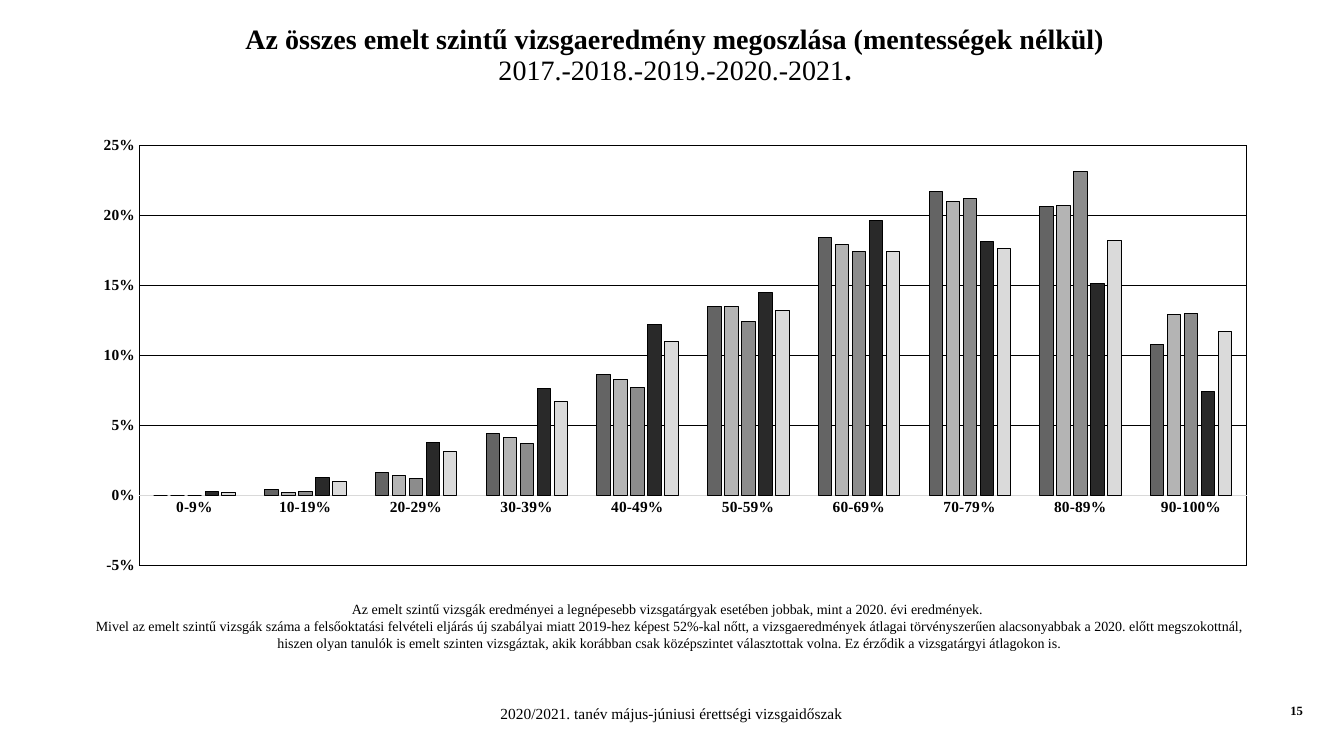
from lxml import etree
from pptx import Presentation
from pptx.chart.data import CategoryChartData
from pptx.dml.color import RGBColor
from pptx.enum.chart import XL_CHART_TYPE as ChartType, XL_TICK_MARK as TickMark
from pptx.enum.text import MSO_ANCHOR as Anchor, PP_ALIGN as Align
from pptx.oxml import parse_xml
from pptx.oxml.ns import nsdecls, qn
from pptx.util import Inches, Pt

BLACK = RGBColor(0x00, 0x00, 0x00)
AXIS_GRAY = RGBColor(0xD9, 0xD9, 0xD9)
YEAR_COLORS = [
    RGBColor(0x64, 0x64, 0x64),
    RGBColor(0xB4, 0xB4, 0xB4),
    RGBColor(0x8C, 0x8C, 0x8C),
    RGBColor(0x29, 0x29, 0x29),
    RGBColor(0xDA, 0xDA, 0xDA),
]
SCORE_BANDS = [f"{low}-{low + 9}%" for low in range(0, 90, 10)] + ["90-100%"]
YEAR_SHARES = [
    [0, 0.004, 0.016, 0.044, 0.086, 0.135, 0.184, 0.217, 0.206, 0.108],
    [0, 0.002, 0.014, 0.041, 0.083, 0.135, 0.179, 0.21, 0.207, 0.129],
    [0, 0.003, 0.012, 0.037, 0.077, 0.124, 0.174, 0.212, 0.231, 0.13],
    [0.003, 0.013, 0.038, 0.076, 0.122, 0.145, 0.196, 0.181, 0.151, 0.074],
    [0.002, 0.01, 0.031, 0.067, 0.11, 0.132, 0.174, 0.176, 0.182, 0.117],
]
PLOT_LAYOUT = {"x": 0.05, "y": 0.04, "w": 0.93, "h": 0.92}


class ExamSlide:
    font_name = "Times New Roman"

    def __init__(self, presentation):
        self.slide = presentation.slides.add_slide(presentation.slide_layouts[6])

    def style_font(self, font, size, bold=False):
        font.name = self.font_name
        font.size = Pt(size)
        font.bold = bold
        font.color.rgb = BLACK

    def style_line(self, line, color=BLACK, width=0.5):
        line.color.rgb = color
        line.width = Pt(width)

    def add_text(self, box, paragraphs, size, align=Align.CENTER,
                 anchor=Anchor.TOP, spacing=None, wrap=True):
        frame = self.slide.shapes.add_textbox(*map(Inches, box)).text_frame
        frame.word_wrap = wrap
        frame.vertical_anchor = anchor
        for index, runs in enumerate(paragraphs):
            paragraph = frame.add_paragraph() if index else frame.paragraphs[0]
            paragraph.alignment = align
            if spacing:
                paragraph.line_spacing = spacing
            for text, bold in runs:
                if text == "\n":
                    paragraph.add_line_break()
                    continue
                run = paragraph.add_run()
                run.text = text
                self.style_font(run.font, size, bold)

    def add_column_chart(self, box, categories, shares, colors):
        data = CategoryChartData(number_format="0%")
        data.categories = categories
        for number, values in enumerate(shares, 1):
            data.add_series(f"Series {number}", values)
        chart = self.slide.shapes.add_chart(
            ChartType.COLUMN_CLUSTERED, *map(Inches, box), data).chart
        chart.has_legend = False
        chart.has_title = False
        self.style_font(chart.font, 10, True)

        plot = chart.plots[0]
        plot.vary_by_categories = False
        plot.gap_width = 219
        plot.overlap = -27
        for series, color in zip(plot.series, colors):
            series.invert_if_negative = False
            series.format.fill.solid()
            series.format.fill.fore_color.rgb = color
            self.style_line(series.format.line)

        for axis in (chart.category_axis, chart.value_axis):
            axis.major_tick_mark = axis.minor_tick_mark = TickMark.NONE
            self.style_font(axis.tick_labels.font, 11, True)
        chart.category_axis.has_major_gridlines = False
        self.style_line(chart.category_axis.format.line, AXIS_GRAY, 0.75)

        share_axis = chart.value_axis
        share_axis.minimum_scale = -0.05
        share_axis.maximum_scale = 0.25
        share_axis.major_unit = 0.05
        share_axis.has_major_gridlines = True
        share_axis.tick_labels.number_format = "0%"
        share_axis.tick_labels.number_format_is_linked = False
        share_axis.format.line.fill.background()
        self.style_line(share_axis.major_gridlines.format.line)
        self.frame_plot(chart)

    def frame_plot(self, chart):
        plot_area = chart.element.find(".//" + qn("c:plotArea"))
        for old_layout in plot_area.findall(qn("c:layout")):
            plot_area.remove(old_layout)
        layout = parse_xml(f"<c:layout {nsdecls('c')}/>")
        manual = etree.SubElement(layout, qn("c:manualLayout"))
        settings = {"layoutTarget": "inner", "xMode": "edge", "yMode": "edge",
                    **PLOT_LAYOUT}
        for tag, value in settings.items():
            etree.SubElement(manual, qn(f"c:{tag}")).set("val", str(value))
        plot_area.insert(0, layout)
        plot_area.append(parse_xml(
            f"<c:spPr {nsdecls('c', 'a')}>"
            '<a:solidFill><a:srgbClr val="FFFFFF"/></a:solidFill>'
            f'<a:ln w="{Pt(0.5)}"><a:solidFill><a:srgbClr val="{BLACK}"/>'
            "</a:solidFill></a:ln></c:spPr>"))


def main():
    presentation = Presentation()
    presentation.slide_width = Inches(13.33)
    presentation.slide_height = Inches(7.5)
    page = ExamSlide(presentation)

    page.add_text((3.59, 6.94, 6.14, 0.29), [
        [("2020/2021. tanév május-júniusi érettségi vizsgaidőszak", False)],
    ], 11)
    page.add_text((0.79, 0.2, 11.81, 0.71), [[
        ("Az összes emelt szintű vizsgaeredmény megoszlása (mentességek nélkül)", True),
        ("\n", True),
        ("2017.-2018.-2019.-2020.-2021", False),
        (".", True),
    ]], 20, anchor=Anchor.MIDDLE, spacing=0.9)
    page.add_text((12.7, 6.92, 0.33, 0.25), [[("15", True)]], 9,
                  align=Align.LEFT, wrap=False)
    page.add_text((0.73, 5.91, 11.81, 0.61), [
        [("Az emelt szintű vizsgák eredményei a legnépesebb vizsgatárgyak "
          "esetében jobbak, mint a 2020. évi eredmények. ", False)],
        [("Mivel az emelt szintű vizsgák száma a felsőoktatási felvételi eljárás "
          "új szabályai miatt 2019-hez képest 52%-kal nőtt, a vizsgaeredmények "
          "átlagai törvényszerűen alacsonyabbak a 2020. előtt megszokottnál, "
          "hiszen olyan tanulók is emelt szinten vizsgáztak, akik korábban csak "
          "középszintet választottak volna. Ez érződik a vizsgatárgyi átlagokon "
          "is.", False)],
    ], 10)
    page.add_column_chart((0.79, 1.26, 11.81, 4.53),
                          SCORE_BANDS, YEAR_SHARES, YEAR_COLORS)
    presentation.save("out.pptx")


if __name__ == "__main__":
    main()
